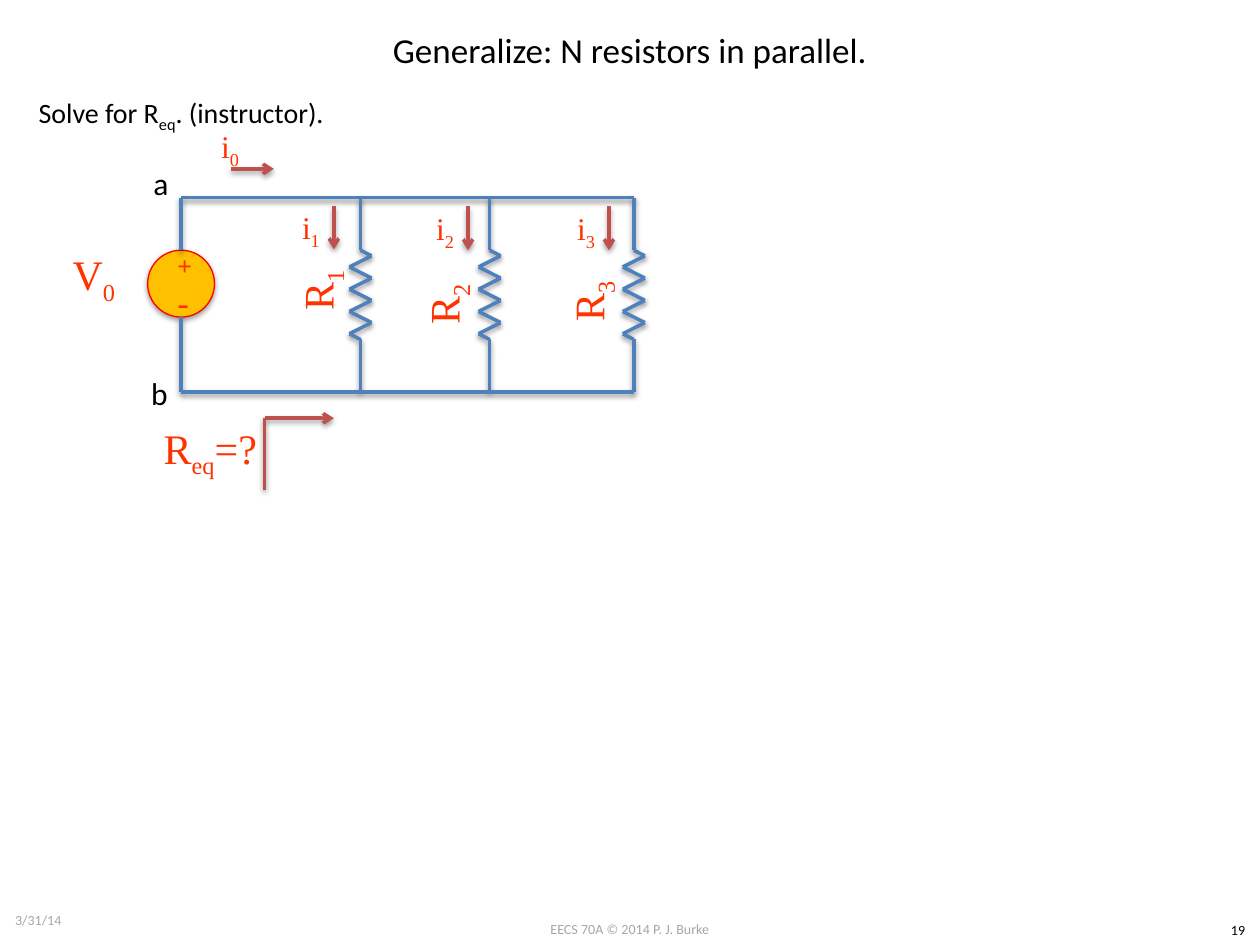
from pptx import Presentation
from pptx.dml.color import RGBColor
from pptx.enum.shapes import MSO_CONNECTOR, MSO_SHAPE
from pptx.enum.text import MSO_ANCHOR, PP_ALIGN
from pptx.oxml import parse_xml
from pptx.oxml.ns import nsdecls
from pptx.util import Pt

BLACK = RGBColor(0, 0, 0)
GREY = RGBColor(0xA6, 0xA6, 0xA6)
ORANGE = RGBColor(0xFF, 0x33, 0x00)
BLUE = RGBColor(0x4F, 0x81, 0xBD)
BRICK = RGBColor(0xC0, 0x50, 0x4D)
GOLD = RGBColor(0xFF, 0xC0, 0x00)
RED = RGBColor(0xFF, 0, 0)
LEFT, CENTER = PP_ALIGN.LEFT, PP_ALIGN.CENTER
TOP, MIDDLE = MSO_ANCHOR.TOP, MSO_ANCHOR.MIDDLE
STRAIGHT = MSO_CONNECTOR.STRAIGHT
OVAL = MSO_SHAPE.OVAL
SERIF = "Times New Roman"
SHADOW = (
    f'<a:effectLst {nsdecls("a")}><a:outerShdw blurRad="39400" dist="20300" '
    'dir="5400000" rotWithShape="0"><a:srgbClr val="000000">'
    '<a:alpha val="38000"/></a:srgbClr></a:outerShdw></a:effectLst>'
)

deck = Presentation()
deck.slide_width, deck.slide_height = Pt(720), Pt(540)
slide = deck.slides.add_slide(deck.slide_layouts[6])
shapes = slide.shapes


def write(text, x, y, w, h, size=24, font=SERIF, color=ORANGE,
          align=CENTER, anchor=MIDDLE, bold=False, turn=0):
    box = shapes.add_textbox(Pt(x), Pt(y), Pt(w), Pt(h))
    box.rotation = turn
    frame = box.text_frame
    frame.word_wrap = True
    frame.vertical_anchor = anchor
    para = frame.paragraphs[0]
    para.alignment = align
    for i, part in enumerate(text.split("|")):
        run = para.add_run()
        run.text = part
        run.font.size = Pt(size)
        run.font.name = font
        run.font.bold = bold
        run.font.color.rgb = color
        if i % 2:
            run._r.get_or_add_rPr().set("baseline", "-25000")


def wire(home, start, end, color=BLUE, arrow=False):
    line = home.add_connector(STRAIGHT, *[Pt(v) for v in (*start, *end)])
    line.line.color.rgb = color
    line.line.width = Pt(2)
    if arrow:
        tail = parse_xml(f'<a:tailEnd {nsdecls("a")} type="arrow"/>')
        line.line._get_or_add_ln().append(tail)
    line._element.spPr.append(parse_xml(SHADOW))


write("EECS 70A © 2014 P. J. Burke", 276, 522.5, 168, 17, size=8,
      font="Calibri", color=GREY, anchor=TOP)
write("19", 695, 523.3, 25, 17, size=8, font="Calibri", color=BLACK, anchor=TOP)
write("3/31/14", 1.5, 511, 168, 29, size=8, font="Calibri", color=GREY, align=LEFT)
write("Generalize: N resistors in parallel.", 36, 0, 648, 56, size=20,
      font="Calibri", color=BLACK)
write("Solve for R|eq|. (instructor).", 15, 51, 188, 27, size=16,
      font="Calibri", color=BLACK, align=LEFT, anchor=TOP)

HIGH, LOW = 113, 224
SOURCE, LAST = 103.5, 362.2
wire(shapes, (LAST, HIGH), (SOURCE, HIGH))

zigzag = [(-6.3 if i % 2 else 6.3, 146.2 + 6.36 * i) for i in range(8)]
trace = [(0, HIGH), (0, 137), (0, 143), *zigzag, (0, 194), (0, 200), (0, LOW)]
for mid in (206, 279.8, LAST):
    group = shapes.add_group_shape().shapes
    points = [(mid + dx, y) for dx, y in trace]
    for start, end in zip(points, points[1:]):
        wire(group, start, end)

cell = shapes.add_shape(OVAL, Pt(84.4), Pt(143), Pt(38.2), Pt(38.2))
cell.fill.solid()
cell.fill.fore_color.rgb = GOLD
cell.line.color.rgb = RED
cell.line.width = Pt(0.75)
cell._element.spPr.append(parse_xml(SHADOW))
write("+", 94.3, 139.7, 19, 24, size=14.8, bold=True)
write("-", 94.3, 160.5, 19, 24, size=20)
wire(shapes, (SOURCE, LOW), (SOURCE, 181.2))
wire(shapes, (SOURCE, 143), (SOURCE, HIGH))
wire(shapes, (LAST, LOW), (SOURCE, LOW))

for n, x, y in ((1, 190.8, 117.5), (2, 267.5, 118), (3, 348, 118)):
    wire(shapes, (x, y), (x, y + 25), color=BRICK, arrow=True)
    write(f"i|{n}", x - 46.6, y - 5, 67, 37.4, size=18)
wire(shapes, (131.8, 96.5), (156.5, 96.5), color=BRICK, arrow=True)
write("i|0", 98, 66.2, 67, 37.4, size=18)

for n, x, y in ((1, 147, 147), (2, 219, 155.5), (3, 301.7, 153.4)):
    write(f"R|{n}", x, y, 72, 37.4, turn=270)

for name, x, y in (("a", 80.6, 90), ("b", 79.2, 210.2)):
    write(name, x, y, 24, 29, size=18, font="Calibri", color=BLACK,
          align=LEFT, anchor=TOP)

probe = shapes.add_group_shape().shapes
wire(probe, (151.2, 239), (190.8, 239), color=BRICK, arrow=True)
wire(probe, (151.2, 280), (151.2, 239), color=BRICK)
write("R|eq|=?", 84.2, 239, 72, 37.4)
write("V|0", 22.3, 141, 62.6, 35.3)

deck.save("out.pptx")
